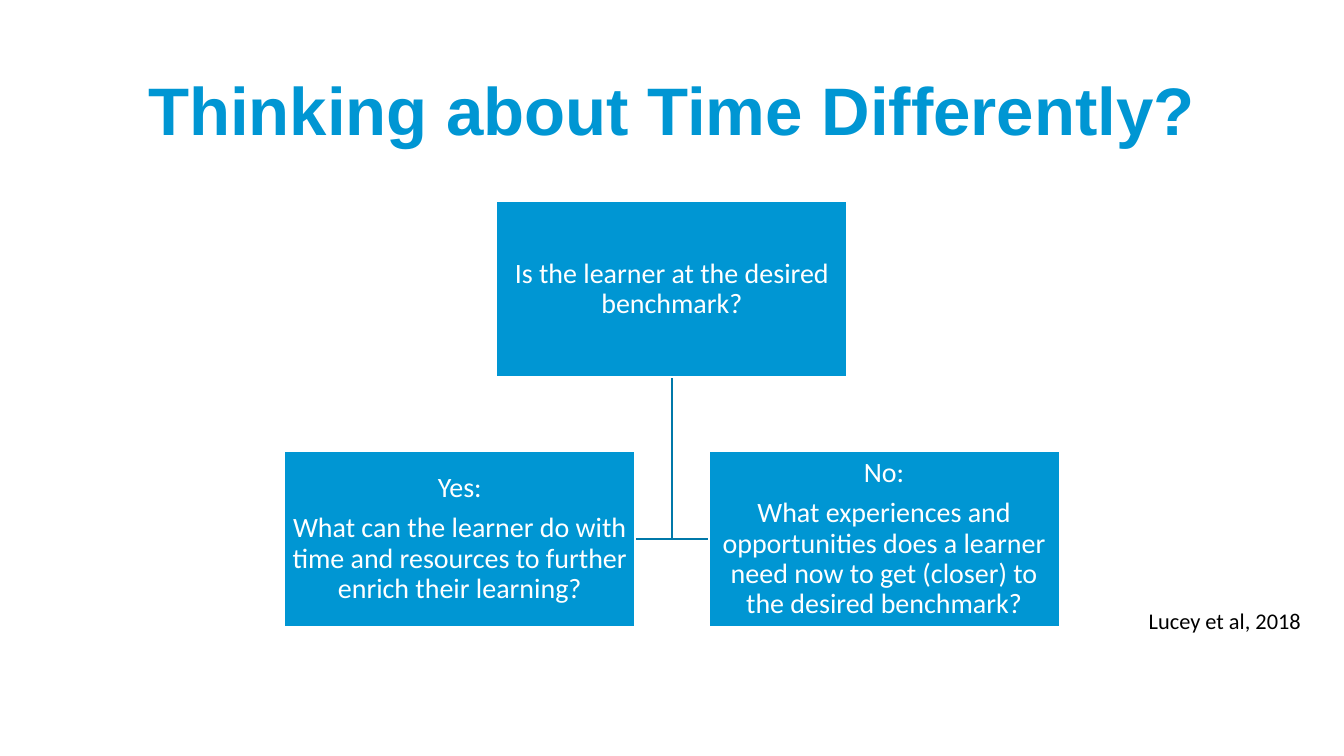
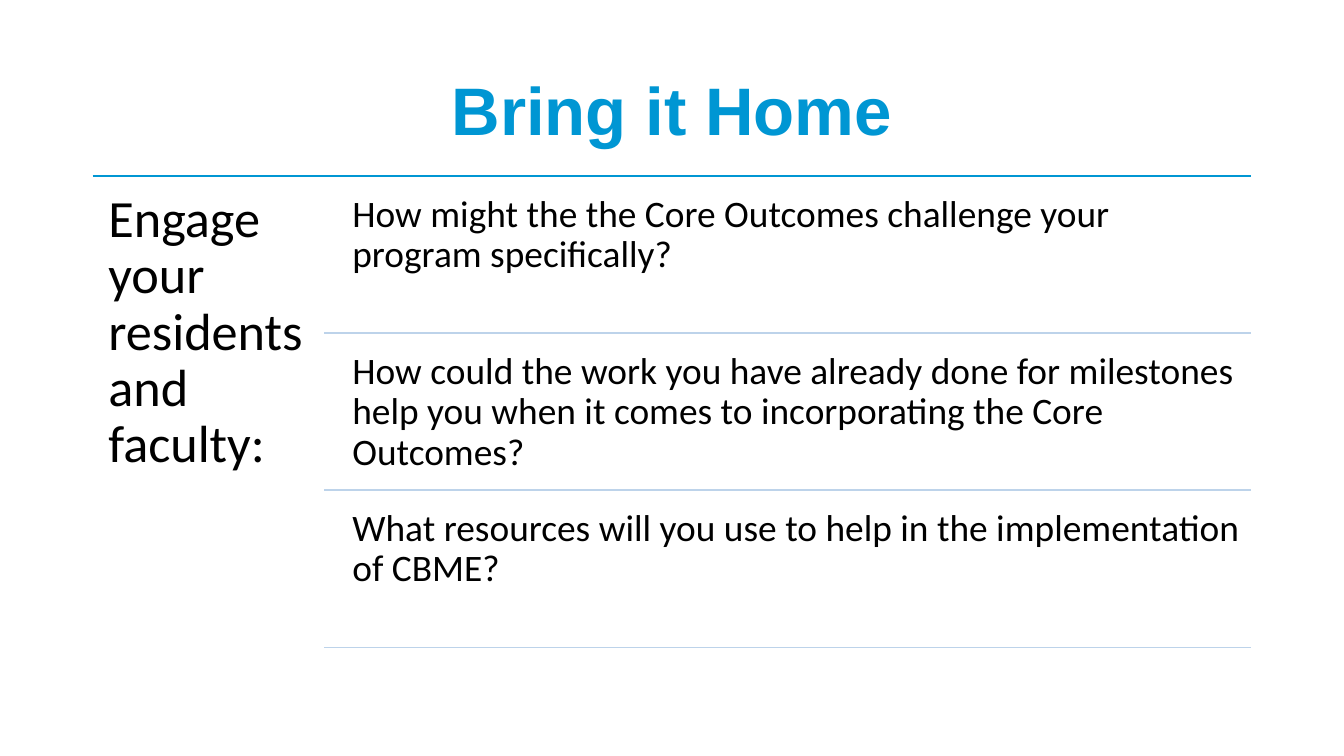
from lxml import etree
from pptx import Presentation
from pptx.dml.color import RGBColor
from pptx.enum.shapes import MSO_CONNECTOR, MSO_SHAPE
from pptx.enum.text import MSO_ANCHOR, PP_ALIGN
from pptx.oxml.ns import qn
from pptx.util import Cm, Pt

RECTANGLE = MSO_SHAPE.RECTANGLE
STRAIGHT = MSO_CONNECTOR.STRAIGHT
LEFT, CENTER = PP_ALIGN.LEFT, PP_ALIGN.CENTER
TOP, MIDDLE = MSO_ANCHOR.TOP, MSO_ANCHOR.MIDDLE

# Content
DECISION_TITLE = "Thinking about Time Differently?"
QUESTION = ["Is the learner at the desired benchmark?"]
ANSWERS = [
    ["Yes:",
     "What can the learner do with time and resources to further enrich their learning?"],
    ["No:",
     "What experiences and opportunities does a learner need now to get (closer) "
     "to the desired benchmark?"],
]
CITATION = "Lucey et al, 2018"

HOME_TITLE = "Bring it Home"
AUDIENCE = "Engage your residents and faculty:"
PROMPTS = [
    "How might the the Core Outcomes challenge your program specifically?",
    "How could the work you have already done for milestones help you when it comes "
    "to incorporating the Core Outcomes?",
    "What resources will you use to help in the implementation of CBME?",
]

# Style and layout, in centimetres
COLORS = {"brand": "0096D3", "branch": "0078A9", "rule": "BDD3EA",
          "ink": "000000", "paper": "FFFFFF"}
HEADING_FONT, BODY_FONT = "Arial", "Calibri"
SLIDE_W, SLIDE_H = 25.4, 14.29
MARGIN = 1.75
CONTENT_W = SLIDE_W - 2 * MARGIN
CENTER_X = SLIDE_W / 2


def color(key):
    return RGBColor.from_string(COLORS[key])


def write(shape, paragraphs, size, ink="ink", font=BODY_FONT, bold=False, align=LEFT,
          anchor=TOP, inset=None, line_spacing=0.9, space_after=0, wrap=True):
    """Fill a shape with paragraphs; space_after is a share of the text size."""
    frame = shape.text_frame
    frame.word_wrap = wrap
    frame.vertical_anchor = anchor
    if inset is not None:
        frame.margin_left = frame.margin_right = Cm(inset)
        frame.margin_top = frame.margin_bottom = Cm(inset)
    for index, text in enumerate(paragraphs):
        paragraph = frame.paragraphs[0] if index == 0 else frame.add_paragraph()
        paragraph.text = text
        paragraph.alignment = align
        paragraph.line_spacing = line_spacing
        paragraph.space_after = Pt(size * space_after)
        paragraph.font.size = Pt(size)
        paragraph.font.name = font
        paragraph.font.bold = bold
        paragraph.font.color.rgb = color(ink)


def add_text(slide, left, top, width, height, paragraphs, size, **style):
    box = slide.shapes.add_textbox(Cm(left), Cm(top), Cm(width), Cm(height))
    write(box, paragraphs, size, **style)


def add_titled_slide(deck, title):
    slide = deck.slides.add_slide(deck.slide_layouts[6])
    add_text(slide, MARGIN, 0.76, CONTENT_W, 2.77, [title], 36, ink="brand",
             font=HEADING_FONT, bold=True, align=CENTER, anchor=MIDDLE)
    return slide


def add_rule(slide, left, y, ink):
    rule = slide.shapes.add_connector(STRAIGHT, Cm(left), Cm(y),
                                      Cm(SLIDE_W - MARGIN), Cm(y))
    rule.line.color.rgb = color(ink)
    rule.line.width = Pt(1)
    etree.SubElement(rule._element.spPr, qn("a:effectLst"))


def add_branch(slide, start_y, end_x, end_y):
    """Draw an open elbow from the question down and across to an answer."""
    builder = slide.shapes.build_freeform(Cm(CENTER_X), Cm(start_y))
    builder.add_line_segments([(Cm(CENTER_X), Cm(end_y)), (Cm(end_x), Cm(end_y))],
                              close=False)
    branch = builder.convert_to_shape()
    branch.shadow.inherit = False
    branch.fill.background()
    branch.line.color.rgb = color("branch")
    branch.line.width = Pt(1)


def add_node(slide, left, top, width, height, paragraphs):
    node = slide.shapes.add_shape(RECTANGLE, Cm(left), Cm(top), Cm(width), Cm(height))
    node.shadow.inherit = False
    node.fill.solid()
    node.fill.fore_color.rgb = color("brand")
    node.line.color.rgb = color("paper")
    node.line.width = Pt(1)
    write(node, paragraphs, 15, ink="paper", align=CENTER, anchor=MIDDLE,
          inset=0.03, space_after=0.35)


def build_decision(deck):
    slide = add_titled_slide(deck, DECISION_TITLE)
    node_w, node_h, gap = 6.63, 3.32, 1.39
    question_y, answers_y = 3.81, 8.53
    for side in (1, -1):
        add_branch(slide, question_y + node_h, CENTER_X + side * gap / 2,
                   answers_y + node_h / 2)
    add_node(slide, CENTER_X - node_w / 2, question_y, node_w, node_h, QUESTION)
    row_w = len(ANSWERS) * (node_w + gap) - gap
    for index, answer in enumerate(ANSWERS):
        left = CENTER_X - row_w / 2 + index * (node_w + gap)
        add_node(slide, left, answers_y, node_w, node_h, answer)
    add_text(slide, 21.46, 11.35, 3.43, 0.77, [CITATION], 12,
             line_spacing=1, wrap=False)


def build_home(deck):
    slide = add_titled_slide(deck, HOME_TITLE)
    top, pitch, pad = 3.33, 2.97, 0.15
    audience_w, prompt_x = 4.38, 6.45
    add_rule(slide, MARGIN, top, "brand")
    add_text(slide, MARGIN, top, audience_w, len(PROMPTS) * pitch + pad, [AUDIENCE], 28,
             inset=0.3, space_after=0.35)
    for index, prompt in enumerate(PROMPTS):
        row_y = top + pad + index * pitch
        add_text(slide, prompt_x, row_y, SLIDE_W - MARGIN - prompt_x, pitch - pad,
                 [prompt], 20, inset=0.21, space_after=0.35)
        add_rule(slide, MARGIN + audience_w, row_y + pitch - pad, "rule")


def main():
    deck = Presentation()
    deck.slide_width, deck.slide_height = Cm(SLIDE_W), Cm(SLIDE_H)
    build_decision(deck)
    build_home(deck)
    deck.save("out.pptx")


if __name__ == "__main__":
    main()
